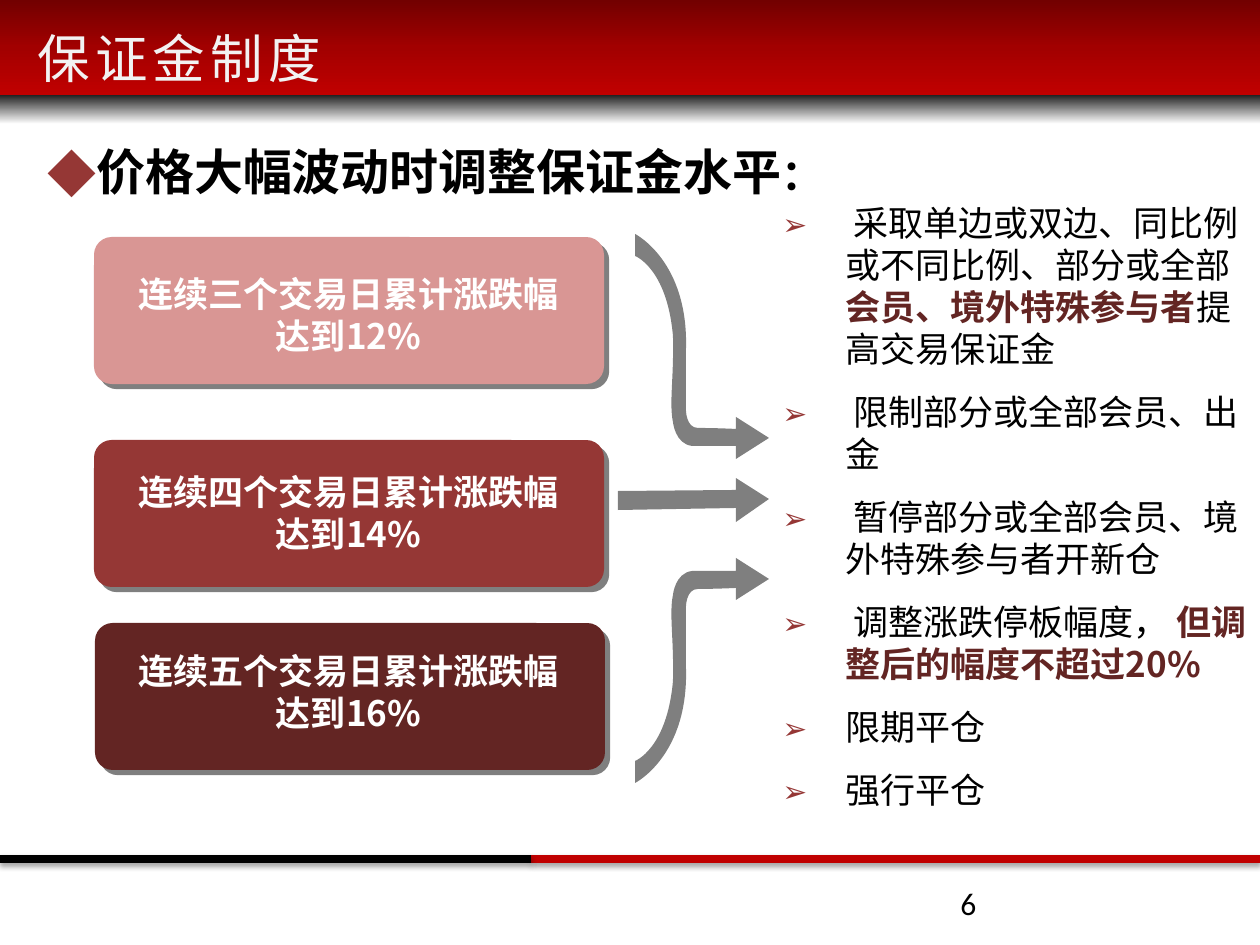
import pptx
import pptx.dml.color
import pptx.enum.shapes
import pptx.enum.text
import pptx.oxml
import pptx.oxml.ns
import pptx.util
from dataclasses import dataclass
from typing import NamedTuple

SCALE = 914400 / 126  # EMU in one px
NAMESPACE = pptx.oxml.ns.nsdecls("a")
qn = pptx.oxml.ns.qn


@dataclass(frozen=True)
class Theme:
    font: str = "Noto Sans CJK SC"
    number_font: str = "Calibri"
    black: str = "000000"
    white: str = "FFFFFF"
    title: str = "F2F2F2"
    red: str = "C00000"
    pink: str = "D99694"
    brick: str = "953735"
    maroon: str = "632523"
    title_size: int = 30
    heading_size: int = 28
    colon_size: int = 24
    body_size: int = 20
    number_size: int = 18


THEME = Theme()


class Span(NamedTuple):
    text: str
    color: str = THEME.black
    bold: bool = False
    size: int = THEME.body_size


class Bullet(NamedTuple):
    mark: str
    indent: int
    hang: int
    percent: int = 100


class Card(NamedTuple):
    left: int
    top: int
    text_top: int
    color: str
    text: str


class Curve(NamedTuple):
    """A cubic curve from the current point."""
    first: tuple[int, int]
    second: tuple[int, int]
    end: tuple[int, int]


def px(length: float) -> int:
    return round(length * SCALE)


def rgb(color: str) -> pptx.dml.color.RGBColor:
    return pptx.dml.color.RGBColor.from_string(color)


def add_shadow(shape, alpha: int, blur: float, distance: float, angle: int) -> None:
    properties = shape._element.spPr
    properties.append(pptx.oxml.parse_xml(
        f'<a:effectLst {NAMESPACE}><a:outerShdw blurRad="{round(blur * 12700)}" '
        f'dist="{round(distance * 12700)}" dir="{angle * 60000}" algn="t" rotWithShape="0">'
        f'<a:srgbClr val="{THEME.black}"><a:alpha val="{alpha * 1000}"/></a:srgbClr>'
        '</a:outerShdw></a:effectLst>'))


def add_band(page, top: int, height: int, colors: list[str]) -> None:
    """Full-width bar with evenly spaced gradient stops, running downwards."""
    band = page.shapes.add_shape(
        pptx.enum.shapes.MSO_SHAPE.RECTANGLE, 0, px(top), px(1260), px(height))
    band.shadow.inherit = False
    band.line.fill.background()
    band.fill.gradient()
    band.fill.gradient_angle = 270
    stops = band._element.spPr.find(".//" + qn("a:gsLst"))
    for old in list(stops):
        stops.remove(old)
    for index, color in enumerate(colors):
        position = 100000 * index // (len(colors) - 1)
        stops.append(pptx.oxml.parse_xml(
            f'<a:gs {NAMESPACE} pos="{position}"><a:srgbClr val="{color}"/></a:gs>'))


def add_rule(page, left: int, right: int, color: str) -> None:
    rule = page.shapes.add_connector(
        pptx.enum.shapes.MSO_CONNECTOR.STRAIGHT, px(left), px(859), px(right), px(859))
    rule.line.color.rgb = rgb(color)
    rule.line.width = pptx.util.Pt(5)
    add_shadow(rule, 35, 3.1, 1.8, 90)


def add_text(page, left: int, top: int, width: int, height: int,
             paragraphs: list[list[Span]], bullet: Bullet | None = None,
             line_points: int | None = None, centered: bool = False,
             font: str = THEME.font, spacing: int = 0) -> None:
    box = page.shapes.add_textbox(px(left), px(top), px(width), px(height))
    frame = box.text_frame
    frame.word_wrap = True
    for index, spans in enumerate(paragraphs):
        para = frame.add_paragraph() if index else frame.paragraphs[0]
        if bullet:
            properties = para._p.get_or_add_pPr()
            properties.set("marL", str(px(bullet.indent)))
            properties.set("indent", str(-px(bullet.hang)))
            for xml in (f'<a:buClr {NAMESPACE}><a:srgbClr val="{THEME.brick}"/></a:buClr>',
                        f'<a:buSzPct {NAMESPACE} val="{bullet.percent * 1000}"/>',
                        f'<a:buFont {NAMESPACE} typeface="{font}"/>',
                        f'<a:buChar {NAMESPACE} char="{bullet.mark}"/>'):
                properties.append(pptx.oxml.parse_xml(xml))
        if index:
            para.space_before = pptx.util.Pt(12)
        if line_points:
            para.line_spacing = pptx.util.Pt(line_points)
        if centered:
            para.alignment = pptx.enum.text.PP_ALIGN.CENTER
        for span in spans:
            run = para.add_run()
            run.text = span.text
            run.font.name = font
            run.font.size = pptx.util.Pt(span.size)
            run.font.bold = span.bold
            run.font.color.rgb = rgb(span.color)
            properties = run._r.get_or_add_rPr()
            properties.append(pptx.oxml.parse_xml(f'<a:ea {NAMESPACE} typeface="{font}"/>'))
            if spacing:
                properties.set("spc", str(spacing * 100))


def add_card(page, card: Card) -> None:
    box = page.shapes.add_shape(pptx.enum.shapes.MSO_SHAPE.ROUNDED_RECTANGLE,
                                px(card.left), px(card.top), px(510), px(147))
    box.adjustments[0] = 0.12
    box.fill.solid()
    box.fill.fore_color.rgb = rgb(card.color)
    box.line.fill.background()
    add_shadow(box, 50, 0, 4.2, 45)
    add_text(page, 112, card.text_top, 473, 97, [[Span(card.text, THEME.white, True)]],
             line_points=24, centered=True)


def add_arrow(page, outline: list) -> None:
    """Draw straight segments, then merge each curve's three points into one segment."""
    parts = [part if isinstance(part, Curve) else (part,) for part in outline]
    start, *rest = [(px(x), px(y)) for part in parts for x, y in part]
    builder = page.shapes.build_freeform(*start, scale=1.0)
    builder.add_line_segments(rest, close=True)
    arrow = builder.convert_to_shape()
    segments = iter(arrow._element.spPr.findall(".//" + qn("a:lnTo")))
    for part in parts[1:]:
        group = [next(segments) for _ in part]
        if len(group) == 3:
            curve = pptx.oxml.parse_xml(f'<a:cubicBezTo {NAMESPACE}/>')
            group[0].addprevious(curve)
            for segment in group:
                curve.append(segment[0])
                segment.getparent().remove(segment)
    arrow.shadow.inherit = False
    arrow.line.fill.background()
    arrow.fill.solid()
    arrow.fill.fore_color.rgb = rgb(THEME.black)
    color = arrow._element.spPr.find(".//" + qn("a:srgbClr"))
    color.append(pptx.oxml.parse_xml(f'<a:alpha {NAMESPACE} val="50000"/>'))


def bent_arrow(flipped: bool) -> list:
    def at(x: int, y: int) -> tuple[int, int]:
        return (x, 1017 - y) if flipped else (x, y)

    return [
        at(635, 234), Curve(at(635, 234), at(689, 261), at(686, 350)),
        Curve(at(686, 380), at(686, 410), at(686, 410)),
        Curve(at(686, 410), at(686, 428), at(698, 428)),
        Curve(at(717, 428), at(736, 429), at(736, 429)),
        at(736, 417), at(769, 438), at(736, 459), at(736, 446),
        Curve(at(736, 446), at(714, 446), at(692, 446)),
        Curve(at(675, 444), at(673, 422), at(673, 422)),
        Curve(at(669, 403), at(674, 378), at(673, 336)),
        Curve(at(667, 268), at(635, 256), at(635, 256)),
    ]


CARDS = [
    Card(94, 237, 266, THEME.pink, "连续三个交易日累计涨跌幅达到12%"),
    Card(94, 440, 464, THEME.brick, "连续四个交易日累计涨跌幅达到14%"),
    Card(95, 623, 643, THEME.maroon, "连续五个交易日累计涨跌幅达到16%"),
]
STRAIGHT_ARROW = [(618, 510), (736, 508), (736, 522), (769, 499),
                  (736, 478), (736, 490), (618, 491)]
MEASURES = [
    [Span(" 采取单边或双边、同比例或不同比例、部分或全部"),
     Span("会员、境外特殊参与者", THEME.maroon, True), Span("提高交易保证金")],
    [Span(" 限制部分或全部会员、出金")],
    [Span(" 暂停部分或全部会员、境外特殊参与者开新仓")],
    [Span(" 调整涨跌停板幅度，"), Span(" 但调整后的幅度不超过20%", THEME.maroon, True)],
    [Span("限期平仓")],
    [Span("强行平仓")],
]


def main() -> None:
    deck = pptx.Presentation()
    deck.slide_width, deck.slide_height = px(1260), px(945)
    page = deck.slides.add_slide(deck.slide_layouts[6])
    # Header band, its fading edge and the footer rule
    add_band(page, 95, 29, ["222222", THEME.white])
    add_band(page, 0, 95, ["720000", "A20000", THEME.red])
    add_rule(page, 531, 1260, THEME.red)
    add_rule(page, 0, 531, THEME.black)
    # Page number, heading and title
    add_text(page, 948, 878, 294, 50, [[Span("6", size=THEME.number_size)]],
             font=THEME.number_font)
    add_text(page, 35, 135, 1171, 702,
             [[Span("价格大幅波动时调整保证金水平", bold=True, size=THEME.heading_size),
               Span("：", bold=True, size=THEME.colon_size)]],
             Bullet("◆", 48, 48), line_points=34)
    add_text(page, 25, 20, 1046, 106,
             [[Span("保证金制度", THEME.title, size=THEME.title_size)]],
             line_points=36, spacing=3)
    # Triggers, arrows and measures
    for card in CARDS:
        add_card(page, card)
    for outline in (STRAIGHT_ARROW, bent_arrow(False), bent_arrow(True)):
        add_arrow(page, outline)
    add_text(page, 720, 195, 540, 627, MEASURES, Bullet("➢", 113, 63, 85), line_points=24)
    deck.save("out.pptx")


if __name__ == "__main__":
    main()
